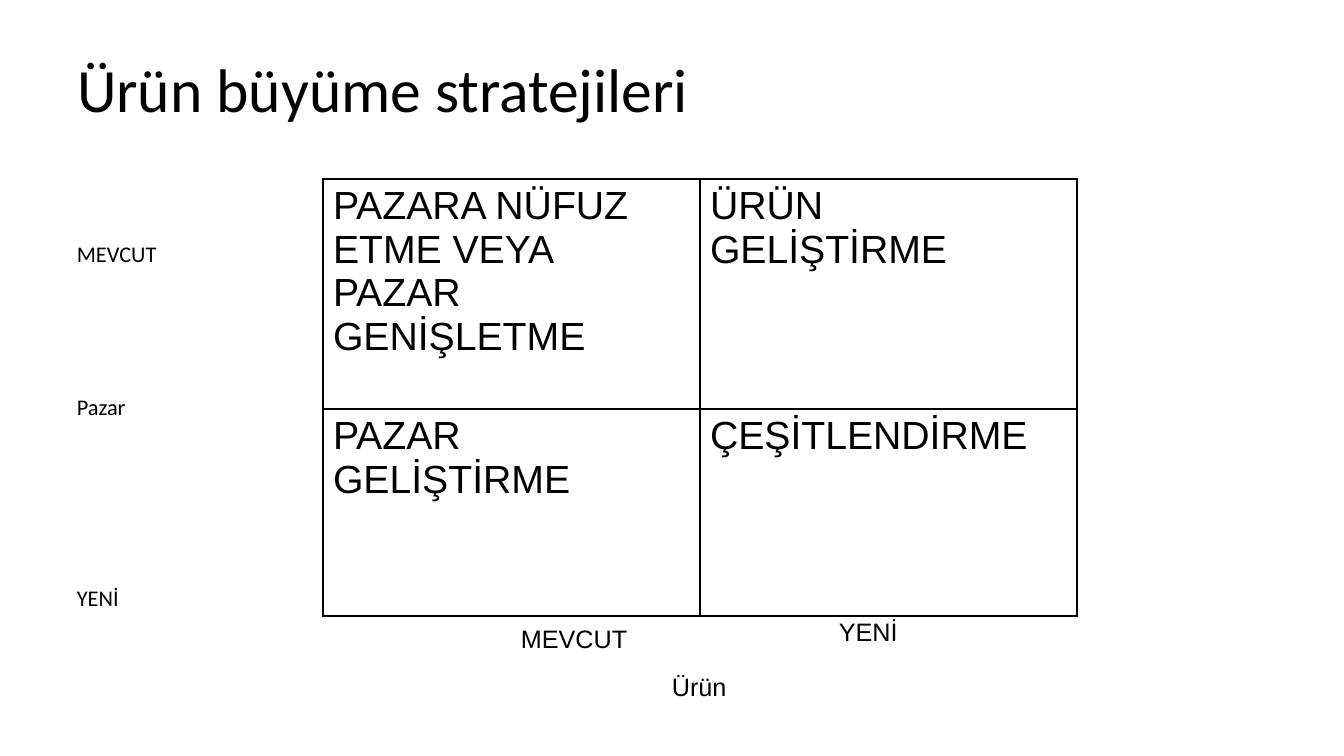
"""Build the product growth strategies matrix slide."""
from dataclasses import dataclass

from lxml import etree
from pptx import Presentation
from pptx import util as u
from pptx.dml.color import RGBColor
from pptx.enum import text
from pptx.oxml.ns import qn

TITLE = "Ürün büyüme stratejileri"
STRATEGIES = [
    ["PAZARA NÜFUZ ETME VEYA PAZAR GENİŞLETME", "ÜRÜN GELİŞTİRME"],
    ["PAZAR GELİŞTİRME", "ÇEŞİTLENDİRME"],
]
MARKET_LABELS = [("MEVCUT", 234), ("Pazar", 387), ("YENİ", 578)]
PRODUCT_LABELS = [("Ürün", 662, 666, 82), ("MEVCUT", 511, 618, 134), ("YENİ", 829, 611, 86)]

SLIDE_SIZE = (1344, 756)
TITLE_BOX = (67, 30, 1210, 126)
MATRIX_ORIGIN = (323, 179)
COLUMN_WIDTH = 377
ROW_HEIGHTS = [230, 207]
MARKET_LEFT, MARKET_WIDTH, LABEL_HEIGHT = 67, 230, 40


@dataclass(frozen=True)
class Theme:
    ink: str = "000000"
    heading_font: str = "Calibri"
    matrix_font: str = "Arial"
    title_size: int = 44
    strategy_size: int = 28
    market_size: int = 16
    product_size: int = 18
    outer_line: float = 2.25
    inner_line: float = 1


THEME = Theme()


def px(length):
    return u.Emu(round(length * 914400 / 100.8))


def write(frame, content, font, size):
    paragraph = frame.paragraphs[0]
    paragraph.alignment = text.PP_ALIGN.LEFT
    run = paragraph.add_run()
    run.text = content
    run.font.name = font
    run.font.size = u.Pt(size)
    run.font.color.rgb = RGBColor.from_string(THEME.ink)
    return paragraph


def add_label(slide, content, box, font, size, anchor, wrap):
    frame = slide.shapes.add_textbox(*map(px, box)).text_frame
    frame.word_wrap = wrap
    frame.vertical_anchor = anchor
    write(frame, content, font, size)


def set_borders(cell, outer_sides):
    properties = cell._tc.get_or_add_tcPr()
    for position, side in enumerate("LRTB"):
        width = THEME.outer_line if side in outer_sides else THEME.inner_line
        line = etree.Element(qn(f"a:ln{side}"), w=str(int(u.Pt(width))))
        fill = etree.SubElement(line, qn("a:solidFill"))
        etree.SubElement(fill, qn("a:srgbClr"), val=THEME.ink)
        properties.insert(position, line)


def add_matrix(slide):
    size = (2 * COLUMN_WIDTH, sum(ROW_HEIGHTS))
    table = slide.shapes.add_table(2, 2, *map(px, MATRIX_ORIGIN + size)).table
    table.first_row = table.horz_banding = False
    for column in table.columns:
        column.width = px(COLUMN_WIDTH)
    for row, height in zip(table.rows, ROW_HEIGHTS):
        row.height = px(height)
    for row_index, strategies in enumerate(STRATEGIES):
        for column_index, strategy in enumerate(strategies):
            cell = table.cell(row_index, column_index)
            cell.fill.background()
            set_borders(cell, "TB"[row_index] + "LR"[column_index])
            write(cell.text_frame, strategy, THEME.matrix_font, THEME.strategy_size)


def main():
    presentation = Presentation()
    presentation.slide_width, presentation.slide_height = map(px, SLIDE_SIZE)
    slide = presentation.slides.add_slide(presentation.slide_layouts[5])

    title = slide.shapes.title
    title.left, title.top, title.width, title.height = map(px, TITLE_BOX)
    title.text_frame.vertical_anchor = text.MSO_ANCHOR.MIDDLE
    heading = write(title.text_frame, TITLE, THEME.heading_font, THEME.title_size)
    heading.line_spacing = 0.9

    for label, top in MARKET_LABELS:
        box = (MARKET_LEFT, top, MARKET_WIDTH, LABEL_HEIGHT)
        add_label(slide, label, box, THEME.heading_font, THEME.market_size,
                  text.MSO_ANCHOR.MIDDLE, True)
    add_matrix(slide)
    for label, left, top, width in PRODUCT_LABELS:
        box = (left, top, width, LABEL_HEIGHT)
        add_label(slide, label, box, THEME.matrix_font, THEME.product_size,
                  text.MSO_ANCHOR.TOP, False)
    presentation.save("out.pptx")


if __name__ == "__main__":
    main()
